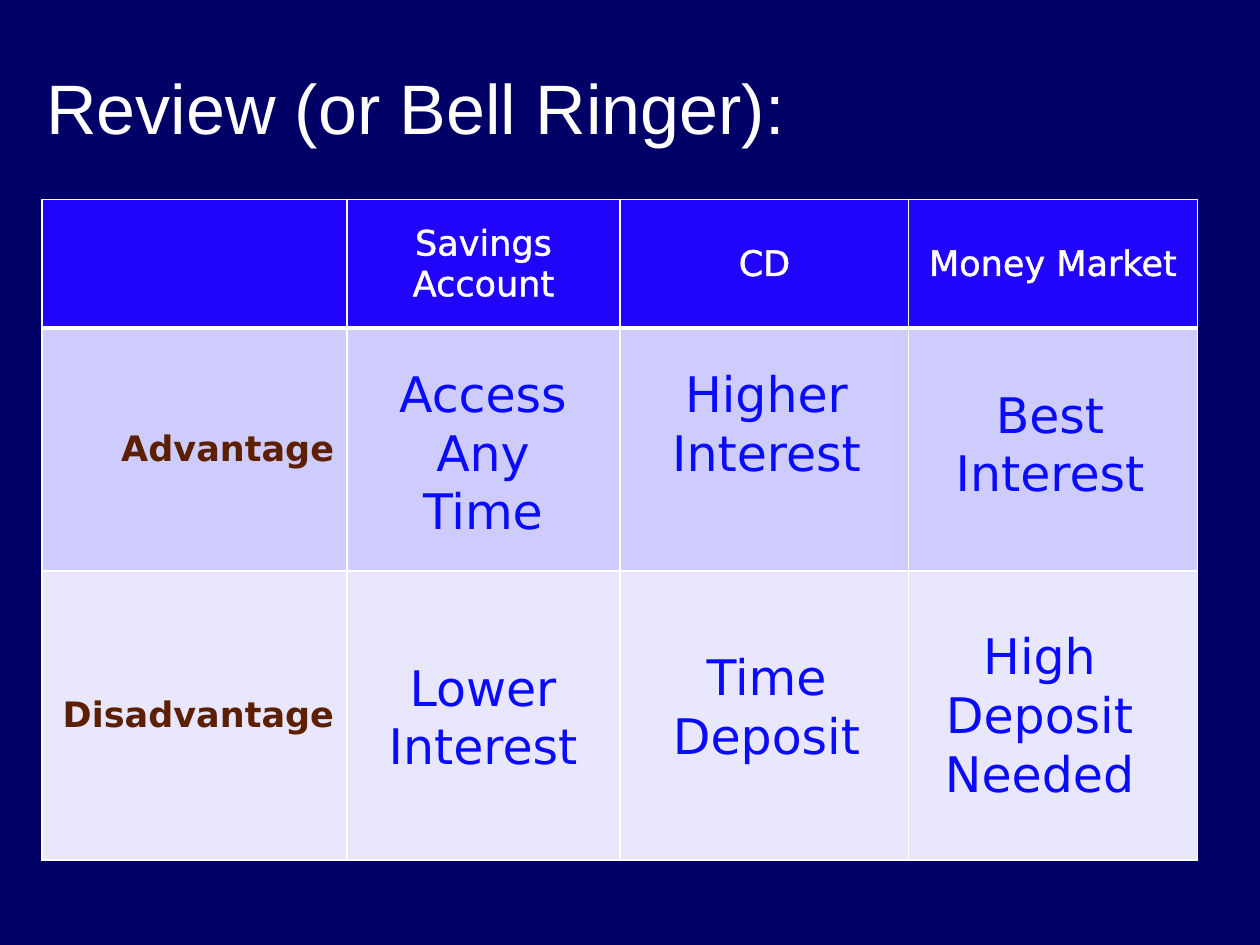
from pptx import Presentation
from pptx.dml.color import RGBColor
from pptx.enum.text import MSO_ANCHOR, MSO_AUTO_SIZE, PP_ALIGN
from pptx.oxml import parse_xml
from pptx.oxml.ns import nsdecls
from pptx.util import Pt

LEFT, CENTER, RIGHT = PP_ALIGN.LEFT, PP_ALIGN.CENTER, PP_ALIGN.RIGHT
MIDDLE, BOTTOM = MSO_ANCHOR.MIDDLE, MSO_ANCHOR.BOTTOM
GROW = MSO_AUTO_SIZE.SHAPE_TO_FIT_TEXT

NAVY = RGBColor(0x00, 0x00, 0x66)
WHITE = RGBColor(0xFF, 0xFF, 0xFF)
BLUE = RGBColor(0x0A, 0x0A, 0xFF)
BROWN = RGBColor(0x5C, 0x1F, 0x00)
HEAD = RGBColor(0x21, 0x04, 0xFA)
BANDS = [RGBColor(0xCD, 0xCC, 0xFD), RGBColor(0xE8, 0xE7, 0xFE)]

HEADS = ["", "Savings Account", "CD", "Money Market"]
LABELS = ["Advantage", "Disadvantage"]
COLS = [174.2, 156.2, 164.9, 164.9]
ROWS = [73.4, 139, 165]

# left, top, height, text
NOTES = [
    (204, 204, 108.7, "Access Any Time"),
    (204, 372, 74.9, "Lower Interest"),
    (366, 204, 74.9, "Higher Interest"),
    (366, 366, 74.9, "Time Deposit"),
    (528, 216, 74.9, "Best Interest"),
    (522, 354, 108.7, "High Deposit Needed"),
]


class Deck:
    body = "DejaVu Sans"
    title = "Arial"

    def __init__(self, wide, high):
        self.show = Presentation()
        self.show.slide_width, self.show.slide_height = Pt(wide), Pt(high)
        self.slide = self.show.slides.add_slide(self.show.slide_layouts[6])
        fill = self.slide.background.fill
        fill.solid()
        fill.fore_color.rgb = NAVY

    def text(self, frame, words, size, color, align, face=body, bold=False):
        para = frame.paragraphs[0]
        para.alignment = align
        run = para.add_run()
        run.text = words
        font = run.font
        font.name, font.size, font.bold = face, Pt(size), bold
        font.color.rgb = color
        return run

    def box(self, left, top, wide, high):
        shape = self.slide.shapes.add_textbox(
            Pt(left), Pt(top), Pt(wide), Pt(high))
        shape.text_frame.word_wrap = True
        return shape.text_frame

    def head(self, words, left, top, wide, high):
        frame = self.box(left, top, wide, high)
        frame.vertical_anchor = BOTTOM
        self.text(frame, words, 40, WHITE, LEFT, self.title)

    def note(self, left, top, high, words):
        frame = self.box(left, top, 144, high)
        frame.auto_size = GROW
        self.text(frame, words, 28, BLUE, CENTER)

    def line(self, tag, width):
        """Make a solid white line element."""
        return parse_xml(
            f'<a:{tag} {nsdecls("a")} w="{int(Pt(width))}"><a:solidFill>'
            f'<a:srgbClr val="{WHITE}"/></a:solidFill></a:{tag}>')

    def cell(self, cell, fill, top, bottom):
        props = cell._tc.get_or_add_tcPr()
        for tag, width in zip(("lnL", "lnR", "lnT", "lnB"),
                              (1, 1, top, bottom)):
            props.append(self.line(tag, width))
        cell.fill.solid()
        cell.fill.fore_color.rgb = fill
        cell.vertical_anchor = MIDDLE

    def table(self, left, top):
        grid = self.slide.shapes.add_table(
            len(ROWS), len(COLS), Pt(left), Pt(top),
            Pt(sum(COLS)), Pt(sum(ROWS))).table
        for col, wide in zip(grid.columns, COLS):
            col.width = Pt(wide)
        for row, high in zip(grid.rows, ROWS):
            row.height = Pt(high)
        edges = [1, 3, 1, 1]
        for r, fill in enumerate([HEAD] + BANDS):
            for c in range(len(COLS)):
                self.cell(grid.cell(r, c), fill, edges[r], edges[r + 1])
        for c, words in enumerate(HEADS):
            if words:
                run = self.text(grid.cell(0, c).text_frame, words, 20,
                                WHITE, CENTER)
                run.font._element.insert(0, self.line("ln", 1.45))
        for r, words in enumerate(LABELS, 1):
            self.text(grid.cell(r, 0).text_frame, words, 20, BROWN, RIGHT,
                      bold=True)


def main():
    deck = Deck(720, 540)
    deck.head("Review (or Bell Ringer):", 19.4, 20.2, 680.4, 68.4)
    deck.table(24, 114)
    for note in NOTES:
        deck.note(*note)
    deck.show.save("out.pptx")


if __name__ == "__main__":
    main()
